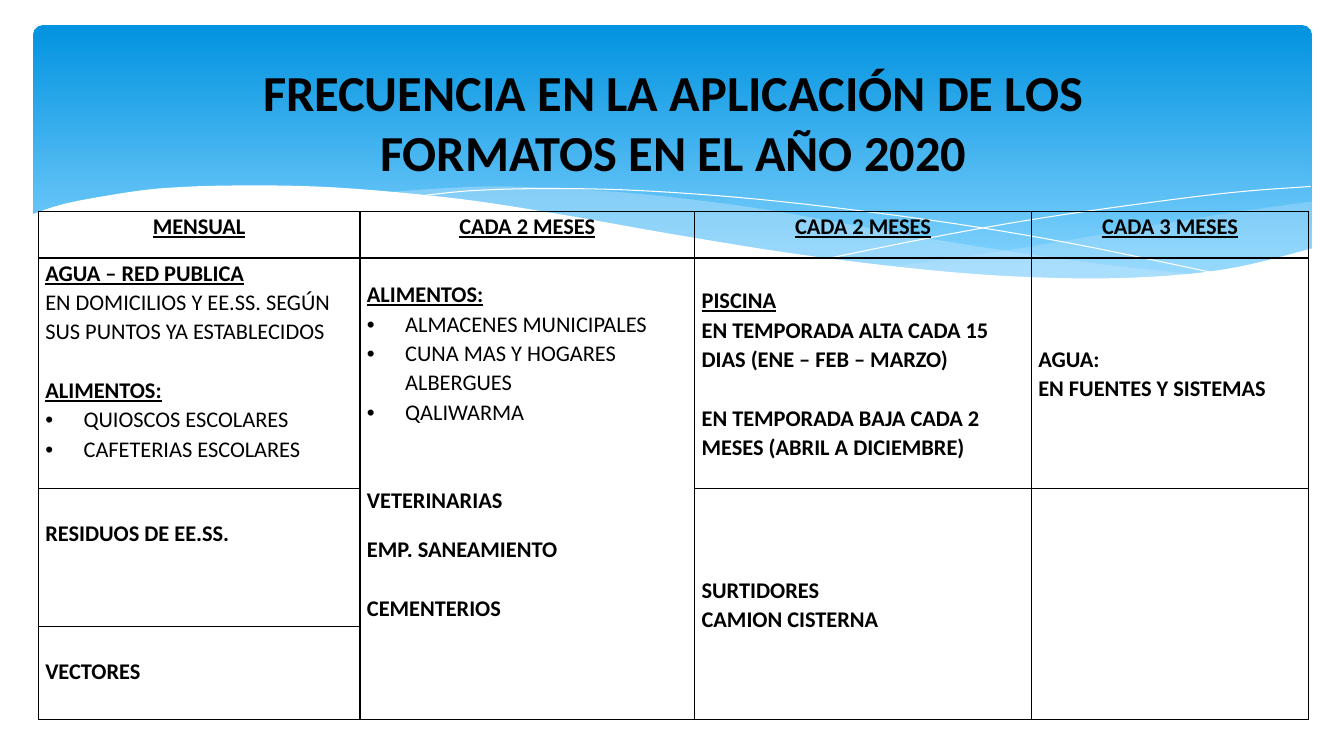
from collections import namedtuple
from itertools import chain

from lxml import etree
from pptx import Presentation
from pptx import util as u
from pptx.dml import color
from pptx.enum import shapes, text
from pptx.oxml import ns

Box = namedtuple("Box", "left top width height")

COLORS = {"ink": "000000", "paper": "FFFFFF", "deep": "0293E0", "sky": "83D3FE", "veil": "C6E7FC"}
FONT = "Calibri"
STYLES = {
    "heading": {"bold": True, "underline": True},
    "strong": {"bold": True, "underline": False},
    "plain": {"bold": False, "underline": False},
    "bullet": {"bold": False, "underline": False},
}
LINE = 21
GAP = 0.29

VEILS = [
    (29, [
        [(12.7, .16), (11.97, .26), (11.16, .39), (10.07, .58), (9.1, .73), (8.51, .81)],
        [(8.51, .81), (9.27, .88), (10.1, .93), (10.82, .93), (11.55, .88), (12.16, .78), (12.7, .63)],
    ]),
    (40, [
        [(11.59, .89), (10.45, .76), (9.1, .56), (8.08, .38), (7.09, .21), (5.88, .07),
         (4.75, .01), (4.06, .03), (3.51, .07)],
        [(3.51, .07), (4.25, .15), (5.68, .38), (7.24, .64), (8.56, .82), (9.67, .92),
         (10.73, .94), (11.59, .89)],
    ]),
]
STRANDS = [
    [(3.81, .11), (4.39, .05), (5.24, .03), (6.21, .06), (7.44, .16), (8.96, .35), (10.29, .57), (11.79, .88)],
    [(7.87, .73), (8.96, .51), (10.04, .32), (11.24, .15), (12.01, .06), (12.69, .01)],
]
CREST = [
    (12.72, .62), (11.96, .81), (11.2, .9), (10.27, .92), (9.13, .86), (7.73, .7), (6.4, .49), (5.27, .29),
    (4.22, .13), (3.02, .02), (2.04, 0), (1.27, .03), (.7, .11), (.3, .19), (0, .29),
]

COLUMNS = [3.19, 3.32, 3.34, 2.75]
ROWS = [0.46, 2.29, 1.37, 0.92]
HEADERS = ["MENSUAL", "CADA 2 MESES", "CADA 2 MESES", "CADA 3 MESES"]
MERGES = [((1, 1), (3, 1)), ((2, 2), (3, 2)), ((2, 3), (3, 3))]
MIDDLE = {"vertical_anchor": text.MSO_ANCHOR.MIDDLE}
ENTRIES = {
    (1, 0): ({}, [
        ("AGUA – RED PUBLICA", "heading", 0),
        ("EN DOMICILIOS Y EE.SS. SEGÚN SUS PUNTOS YA ESTABLECIDOS", "plain", 0),
        ("ALIMENTOS:", "heading", LINE),
        ("QUIOSCOS ESCOLARES", "bullet", 0),
        ("CAFETERIAS ESCOLARES", "bullet", 0),
    ]),
    (1, 1): ({**MIDDLE, "margin_bottom": u.Inches(0.75)}, [
        ("ALIMENTOS:", "heading", 0),
        ("ALMACENES MUNICIPALES", "bullet", 0),
        ("CUNA MAS Y HOGARES ALBERGUES", "bullet", 0),
        ("QALIWARMA", "bullet", 0),
        ("VETERINARIAS", "strong", 2 * LINE),
        ("EMP. SANEAMIENTO", "strong", 14.5),
        ("CEMENTERIOS", "strong", LINE),
    ]),
    (1, 2): (MIDDLE, [
        ("PISCINA", "heading", 0),
        ("EN TEMPORADA ALTA CADA 15 DIAS (ENE – FEB – MARZO)", "strong", 0),
        ("EN TEMPORADA BAJA CADA 2 MESES (ABRIL A DICIEMBRE)", "strong", LINE),
    ]),
    (1, 3): (MIDDLE, [("AGUA:", "strong", 0), ("EN FUENTES Y SISTEMAS", "strong", 0)]),
    (2, 0): ({"margin_top": u.Inches(GAP)}, [("RESIDUOS DE EE.SS.", "strong", 0)]),
    (2, 2): (MIDDLE, [("SURTIDORES", "strong", 0), ("CAMION CISTERNA", "strong", 0)]),
    (3, 0): ({"margin_top": u.Inches(GAP)}, [("VECTORES", "strong", 0)]),
}


def rgb(name):
    return color.RGBColor.from_string(COLORS[name])


def apply(target, values):
    for name, value in values.items():
        setattr(target, name, value)


def place(box):
    return [u.Inches(length) for length in box]


def smooth(knots, steps=6):
    padded = [knots[0], *knots, knots[-1]]
    points = [knots[0]]
    for a, b, c, d in zip(padded, padded[1:], padded[2:], padded[3:]):
        for step in range(1, steps + 1):
            t = step / steps
            points.append(tuple(
                (2 * q + (r - p) * t + (2 * p - 5 * q + 4 * r - s) * t ** 2
                 + (3 * q - p - 3 * r + s) * t ** 3) / 2
                for p, q, r, s in zip(a, b, c, d)))
    return points


def add_outline(page, box, points, close=True):
    spots = [(u.Inches(box.left + x), u.Inches(box.top + y)) for x, y in points]
    builder = page.shapes.build_freeform(*spots[0])
    builder.add_line_segments(spots[1:], close=close)
    outline = builder.convert_to_shape()
    outline.shadow.inherit = False
    return outline


def fill_outline(outline, name, opacity=100):
    outline.fill.solid()
    outline.fill.fore_color.rgb = rgb(name)
    outline.line.fill.background()
    if opacity < 100:
        tint = outline.fill._xPr.find(".//" + ns.qn("a:srgbClr"))
        etree.SubElement(tint, ns.qn("a:alpha"), val=str(opacity * 1000))


def add_banner(page, box):
    banner = page.shapes.add_shape(shapes.MSO_SHAPE.ROUNDED_RECTANGLE, *place(box))
    banner.adjustments[0] = 0.034
    banner.shadow.inherit = False
    banner.line.fill.background()
    banner.fill.gradient()
    banner.fill.gradient_angle = 270
    for stop, name, position in zip(banner.fill.gradient_stops, ("deep", "sky"), (0, 0.9)):
        stop.color.rgb = rgb(name)
        stop.position = position


def add_waves(page, box):
    for opacity, edges in VEILS:
        points = list(chain.from_iterable(smooth(edge) for edge in edges))
        fill_outline(add_outline(page, box, points), "veil", opacity)
    for strand in STRANDS:
        curve = add_outline(page, box, smooth(strand), close=False)
        curve.fill.background()
        curve.line.color.rgb = rgb("paper")
        curve.line.width = u.Pt(0)
    corners = [(0, box.height), (box.width, box.height)]
    fill_outline(add_outline(page, box, smooth(CREST) + corners), "paper")


def write_para(para, words, style, before=0, align=text.PP_ALIGN.LEFT):
    apply(para, {"alignment": align, "line_spacing": 1.07, "space_before": u.Pt(before)})
    span = para.add_run()
    span.text = words
    apply(span.font, {"name": FONT, "size": u.Pt(16), **STYLES[style]})
    span.font.color.rgb = rgb("ink")
    if style == "bullet":
        props = para._p.get_or_add_pPr()
        props.set("marL", str(u.Inches(0.38)))
        props.set("indent", str(-u.Inches(0.38)))
        etree.SubElement(props, ns.qn("a:buFont"), typeface="Arial")
        etree.SubElement(props, ns.qn("a:buChar"), char="•")


def format_cell(cell):
    side = u.Inches(0.07)
    apply(cell, {"margin_left": side, "margin_right": side, "margin_top": 0, "margin_bottom": 0})
    props = cell._tc.get_or_add_tcPr()
    for edge in ("lnL", "lnR", "lnT", "lnB"):
        border = etree.SubElement(props, ns.qn("a:" + edge), w=str(u.Pt(1)))
        paint = etree.SubElement(border, ns.qn("a:solidFill"))
        etree.SubElement(paint, ns.qn("a:srgbClr"), val=COLORS["ink"])
    cell.fill.background()


def add_schedule(page, box):
    grid = page.shapes.add_table(len(ROWS), len(COLUMNS), *place(box)).table
    apply(grid, {"first_row": False, "horz_banding": False})
    for column, width in zip(grid.columns, COLUMNS):
        column.width = u.Inches(width)
    for row, height in zip(grid.rows, ROWS):
        row.height = u.Inches(height)
    for cell in grid.iter_cells():
        format_cell(cell)
    for first, last in MERGES:
        grid.cell(*first).merge(grid.cell(*last))
    for index, header in enumerate(HEADERS):
        para = grid.cell(0, index).text_frame.paragraphs[0]
        write_para(para, header, "heading", align=text.PP_ALIGN.CENTER)
    for spot, (layout, lines) in ENTRIES.items():
        cell = grid.cell(*spot)
        apply(cell, layout)
        for index, line in enumerate(lines):
            frame = cell.text_frame
            para = frame.add_paragraph() if index else frame.paragraphs[0]
            write_para(para, *line)


def add_title(page, box):
    title = page.shapes.title
    apply(title, dict(zip(box._fields, place(box))))
    frame = title.text_frame
    apply(frame, {"word_wrap": True, "auto_size": text.MSO_AUTO_SIZE.NONE, **MIDDLE})
    para = frame.paragraphs[0]
    para.alignment = text.PP_ALIGN.CENTER
    span = para.add_run()
    span.text = "FRECUENCIA EN LA APLICACIÓN DE LOS FORMATOS EN EL AÑO 2020"
    apply(span.font, {"name": FONT, "size": u.Pt(36), "bold": True})
    span.font.color.rgb = rgb("ink")
    page.shapes._spTree.append(title._element)


def main():
    deck = Presentation()
    deck.slide_width, deck.slide_height = u.Inches(13.33), u.Inches(7.5)
    page = deck.slides.add_slide(deck.slide_layouts[5])
    add_banner(page, Box(0.33, 0.25, 12.68, 2.7))
    add_waves(page, Box(0.31, 1.84, 12.72, 1.45))
    add_schedule(page, Box(0.38, 2.1, sum(COLUMNS), sum(ROWS)))
    add_title(page, Box(2.18, 0.52, 9, 1.37))
    deck.save("out.pptx")


if __name__ == "__main__":
    main()
